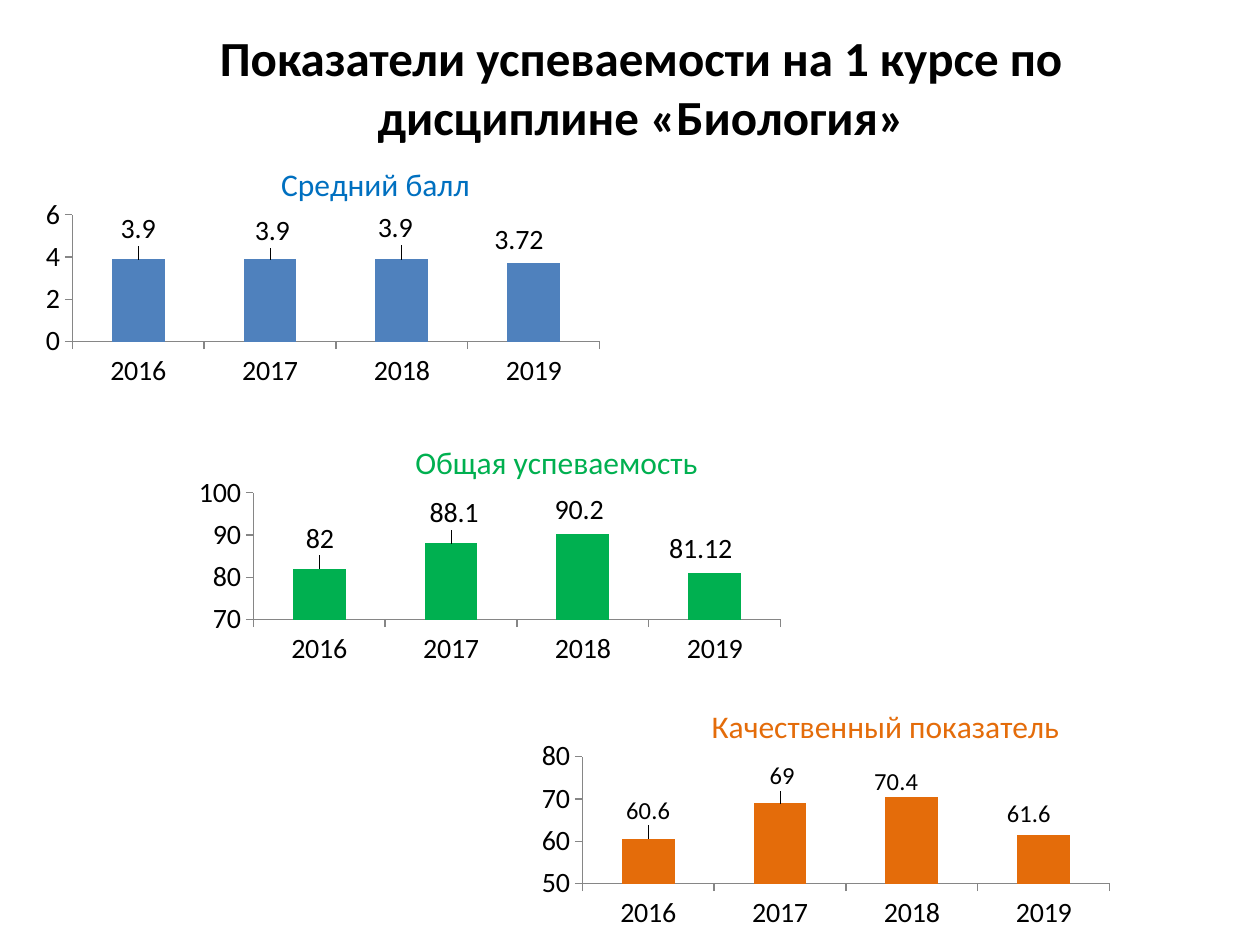
import pptx
import pptx.chart.data
import pptx.dml.color
import pptx.enum.chart
import pptx.enum.text
import pptx.oxml
import pptx.oxml.ns
import pptx.util

RGB = pptx.dml.color.RGBColor
BLACK = RGB(0, 0, 0)
GREY = RGB(0x86, 0x86, 0x86)
STEEL = RGB(0x4F, 0x81, 0xBD)
BLUE = RGB(0x00, 0x70, 0xC0)
GREEN = RGB(0x00, 0xB0, 0x50)
ORANGE = RGB(0xE4, 0x6C, 0x0A)
SCALE = 914400 / 126
WIDE, HIGH = 745, 258
YEARS = ("2016", "2017", "2018", "2019")
FRAME = {"x": 0.093, "y": 0.271, "w": 0.708, "h": 0.492}

CHARTS = (
    {"at": (3, 145), "title": "Средний балл", "hue": BLUE, "fill": STEEL,
     "vals": (3.9, 3.9, 3.9, 3.72), "range": (0, 6, 2), "size": 16,
     "moves": ((0, -8), (2, -6), (-7, -9), (-15, -1))},
    {"at": (184, 423), "title": "Общая успеваемость", "hue": GREEN, "fill": GREEN,
     "vals": (82, 88.1, 90.2, 81.12), "range": (70, 100, 10), "size": 16,
     "moves": ((1, -8), (3, -8), (-4, -2), (-14, -1))},
    {"at": (513, 687), "title": "Качественный показатель", "hue": ORANGE, "fill": ORANGE,
     "vals": (60.6, 69, 70.4, 61.6), "range": (50, 80, 10), "size": 14,
     "moves": ((0, -8), (2, -7), (-16, 4), (-15, -1))},
)


def px(*nums):
    """Turn pixel lengths into EMU."""
    return [pptx.util.Emu(round(num * SCALE)) for num in nums]


def style(item, values):
    """Set each named attribute on an item."""
    for name, value in values.items():
        setattr(item, name, value)


def ink(font, size, color=BLACK, bold=False):
    """Format a font."""
    style(font, {"name": "Calibri", "size": pptx.util.Pt(size), "bold": bold})
    font.color.rgb = color


def layout(parts, inner=False):
    """Make a manual layout element from fractions of the chart."""
    target = '<c:layoutTarget val="inner"/>' if inner else ""
    modes = '<c:xMode val="edge"/><c:yMode val="edge"/>' if inner else ""
    sizes = "".join(f'<c:{key} val="{val:.3f}"/>' for key, val in parts.items())
    space = pptx.oxml.ns.nsdecls("c")
    return pptx.oxml.parse_xml(
        f"<c:layout {space}><c:manualLayout>{target}{modes}{sizes}"
        "</c:manualLayout></c:layout>")


def draw_axis(axis):
    """Format one axis."""
    kinds = pptx.enum.chart
    style(axis, {"has_major_gridlines": False,
                 "major_tick_mark": kinds.XL_TICK_MARK.OUTSIDE,
                 "minor_tick_mark": kinds.XL_TICK_MARK.NONE})
    ink(axis.tick_labels.font, 16)
    axis.format.line.color.rgb = GREY
    axis.format.line.width = pptx.util.Pt(0.75)


def draw_tags(series, size, moves):
    """Label each column and nudge its label."""
    above = pptx.enum.chart.XL_LABEL_POSITION.OUTSIDE_END
    style(series.data_labels, {"show_value": True, "position": above})
    ink(series.data_labels.font, size)
    for index, (right, down) in enumerate(moves):
        tag = series.points[index].data_label
        tag.position = above
        ink(tag.font, size)
        node = series.data_labels._element.findall(pptx.oxml.ns.qn("c:dLbl"))[index]
        node.insert(1, layout({"x": right / WIDE, "y": down / HIGH}))


def draw_chart(slide, box, info):
    """Draw one titled column chart in a box."""
    data = pptx.chart.data.CategoryChartData()
    data.categories = YEARS
    data.add_series("Series 1", info["vals"])
    kind = pptx.enum.chart.XL_CHART_TYPE.COLUMN_CLUSTERED
    chart = slide.shapes.add_chart(kind, *px(*box), data).chart
    ink(chart.font, 18)
    style(chart, {"has_legend": False, "has_title": True})
    head = chart.chart_title
    head.include_in_layout = False
    head.text_frame.text = info["title"]
    ink(head.text_frame.paragraphs[0].runs[0].font, 18, info["hue"])
    area = chart._chartSpace.chart.plotArea
    for old in area.findall(pptx.oxml.ns.qn("c:layout")):
        area.remove(old)
    area.insert(0, layout(FRAME, inner=True))
    draw_axis(chart.category_axis)
    draw_axis(chart.value_axis)
    low, top, step = info["range"]
    style(chart.value_axis, {"minimum_scale": low, "maximum_scale": top,
                             "major_unit": step})
    plot = chart.plots[0]
    style(plot, {"gap_width": 150, "vary_by_categories": False})
    series = plot.series[0]
    series.format.fill.solid()
    series.format.fill.fore_color.rgb = info["fill"]
    draw_tags(series, info["size"], info["moves"])


def draw_title(slide, box):
    """Write the slide title in a box."""
    frame = slide.shapes.add_textbox(*px(*box)).text_frame
    style(frame, {"word_wrap": True,
                  "vertical_anchor": pptx.enum.text.MSO_ANCHOR.MIDDLE})
    line = frame.paragraphs[0]
    line.alignment = pptx.enum.text.PP_ALIGN.CENTER
    run = line.add_run()
    run.text = "Показатели успеваемости на 1 курсе по дисциплине «Биология»"
    ink(run.font, 28, bold=True)


def main():
    """Build and save the slide."""
    deck = pptx.Presentation()
    wide, high = px(1260, 945)
    style(deck, {"slide_width": wide, "slide_height": high})
    slide = deck.slides.add_slide(deck.slide_layouts[6])
    for info in CHARTS:
        draw_chart(slide, (*info["at"], WIDE, HIGH), info)
    draw_title(slide, (74, 16, 1134, 141))
    deck.save("out.pptx")


if __name__ == "__main__":
    main()
